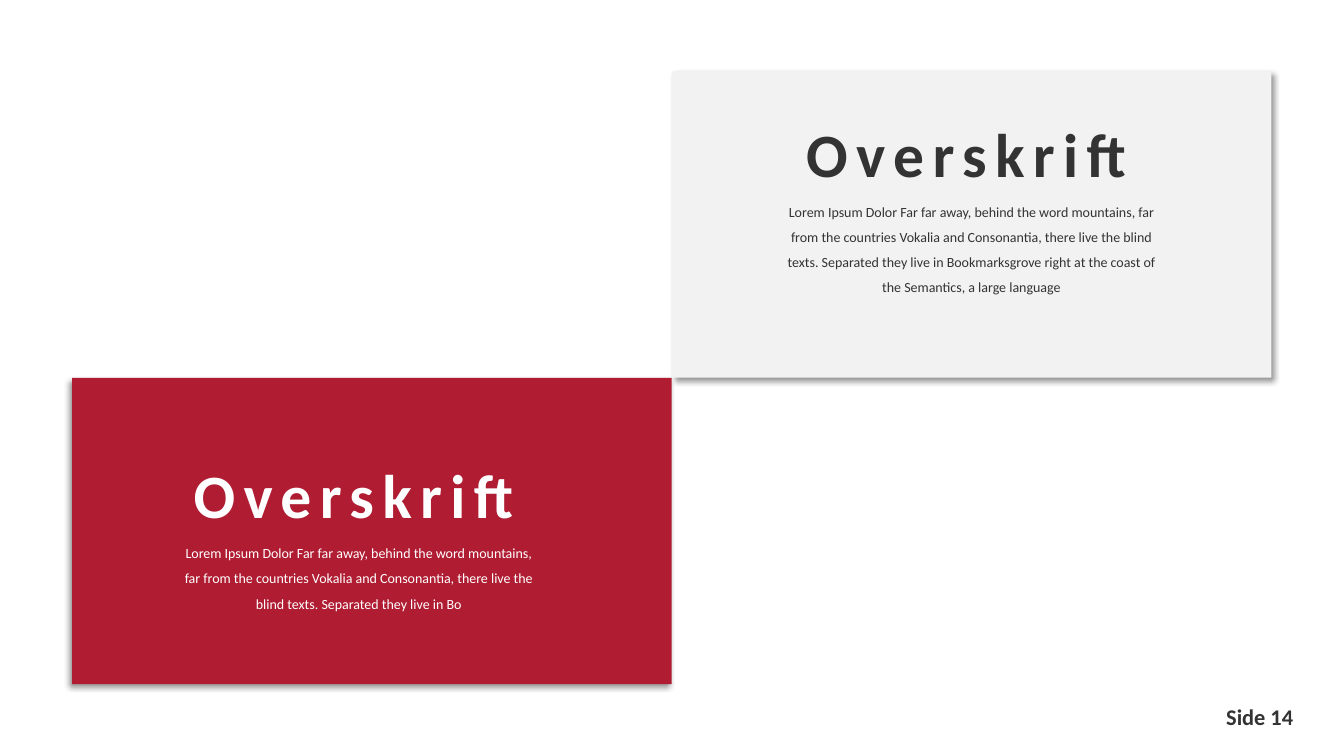
from lxml import etree
from pptx import Presentation
from pptx.dml.color import RGBColor
from pptx.enum import shapes, text
from pptx.oxml import ns
from pptx.util import Cm, Pt

RED = RGBColor(0xB0, 0x1C, 0x32)
PALE = RGBColor(0xF2, 0xF2, 0xF2)
DARK = RGBColor(0x33, 0x33, 0x33)
WHITE = RGBColor(0xFF, 0xFF, 0xFF)

WIDTH, HEIGHT = 33.87, 19.05
CARD_WIDTH, CARD_HEIGHT = 15.11, 7.72
CENTER_X, CENTER_Y = 16.93, 9.52

HEADING = {"size": Pt(44), "bold": True}
BODY = {"size": Pt(10), "bold": False}
PAGE_NUMBER = {"size": Pt(16), "bold": True}

LOREM = ("Lorem Ipsum Dolor Far far away, behind the word mountains, far from "
         "the countries Vokalia and Consonantia, there live the blind texts. "
         "Separated they live in Bo")


def place(shape, left, top, width, height):
    values = {"left": left, "top": top, "width": width, "height": height}
    for name, value in values.items():
        setattr(shape, name, Cm(value))


def add_shadow(shape, angle):
    """Give the shape a soft outer shadow; the angle is in degrees."""
    shape.shadow.inherit = False
    effects = shape.element.spPr.find(ns.qn("a:effectLst"))
    shadow = etree.SubElement(
        effects, ns.qn("a:outerShdw"), blurRad=str(Pt(4)), dist=str(Pt(3)),
        dir=str(angle * 60000), algn="ctr", rotWithShape="0")
    black = etree.SubElement(shadow, ns.qn("a:srgbClr"), val="000000")
    etree.SubElement(black, ns.qn("a:alpha"), val="40000")


def add_card(page, left, top, fill, shadow_angle):
    card = page.shapes.add_shape(
        shapes.MSO_SHAPE.RECTANGLE, Cm(left), Cm(top),
        Cm(CARD_WIDTH), Cm(CARD_HEIGHT))
    card.fill.solid()
    card.fill.fore_color.rgb = fill
    card.line.fill.background()
    add_shadow(card, shadow_angle)


def write(box, words, style, color, align=text.PP_ALIGN.CENTER,
          line_spacing=1.0, letter_spacing=0):
    frame = box.text_frame
    frame.word_wrap = True
    frame.auto_size = text.MSO_AUTO_SIZE.SHAPE_TO_FIT_TEXT
    frame.vertical_anchor = text.MSO_ANCHOR.TOP
    para = frame.paragraphs[0]
    para.alignment = align
    para.line_spacing = line_spacing
    span = para.add_run()
    span.text = words
    for name, value in {"name": "Calibri", **style}.items():
        setattr(span.font, name, value)
    span.font.color.rgb = color
    if letter_spacing:
        span.font._element.set("spc", str(letter_spacing * 100))


def add_text(page, bounds, words, style, color, **options):
    box = page.shapes.add_textbox(*map(Cm, bounds))
    write(box, words, style, color, **options)
    return box


def add_title(page, bounds, words, color):
    title = page.shapes.title
    place(title, *bounds)
    write(title, words, HEADING, color, letter_spacing=6)
    # Bring the title in front of the cards
    title.element.getparent().append(title.element)


def main():
    deck = Presentation()
    deck.slide_width, deck.slide_height = Cm(WIDTH), Cm(HEIGHT)
    page = deck.slides.add_slide(deck.slide_layouts[5])

    # Cards that meet at the centre of the slide
    add_card(page, CENTER_X, CENTER_Y - CARD_HEIGHT, PALE, 45)
    add_card(page, CENTER_X - CARD_WIDTH, CENTER_Y, RED, 135)

    # Upper right card
    add_title(page, (19.35, 2.79, 10.26, 2.13), "Overskrift", DARK)
    add_text(page, (19.35, 4.78, 10.26, 2.82),
             LOREM + "okmarksgrove right at the coast of the Semantics, "
             "a large language", BODY, DARK, line_spacing=1.5)

    # Lower left card
    add_text(page, (3.91, 11.38, 10.26, 2.13), "Overskrift", HEADING, WHITE,
             letter_spacing=6)
    add_text(page, (4.29, 13.39, 9.5, 2.11), LOREM, BODY, WHITE,
             line_spacing=1.5)

    # Page number
    number = add_text(page, (28.88, 17.48, 4.22, 1.19), "Side 14",
                      PAGE_NUMBER, DARK, align=text.PP_ALIGN.RIGHT)
    margins = {"left": 0.51, "right": 0.51, "top": 0.25, "bottom": 0.25}
    for side, margin in margins.items():
        setattr(number.text_frame, f"margin_{side}", Cm(margin))

    deck.save("out.pptx")


if __name__ == "__main__":
    main()
